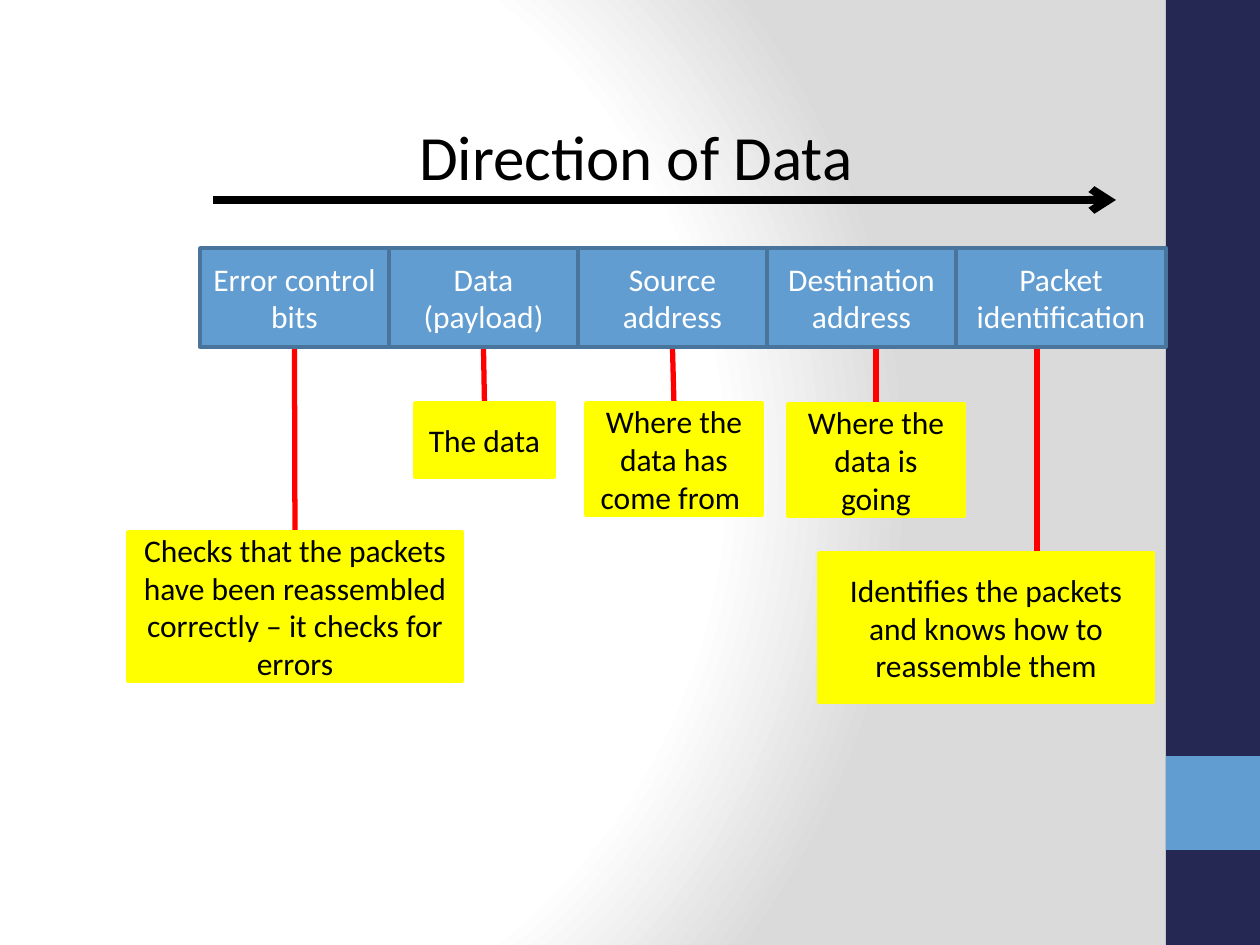
"""Build a slide that labels the fields of a data packet."""
from pptx import Presentation
from pptx.dml.color import RGBColor
from pptx.enum.shapes import MSO_CONNECTOR, MSO_SHAPE
from pptx.enum.text import MSO_ANCHOR, PP_ALIGN
from pptx.oxml import parse_xml
from pptx.oxml.ns import nsdecls
from pptx.util import Emu, Pt

SCALE = 914400 / 126
COLOURS = {"navy": "242852", "blue": "629DD1", "edge": "49749B", "yellow": "FFFF00",
           "red": "FF0000", "black": "000000", "white": "FFFFFF", "grey": "DADADA"}
FRAME_FORMAT = {"word_wrap": True, "vertical_anchor": MSO_ANCHOR.MIDDLE}


def px(*lengths):
    return [Emu(round(length * SCALE)) for length in lengths]


def write(box, text, size, colour):
    frame = box.text_frame
    frame.text = text
    for key, value in FRAME_FORMAT.items():
        setattr(frame, key, value)
    for para in frame.paragraphs:
        para.alignment = PP_ALIGN.CENTER
        for span in para.runs:
            for key, value in {"name": "Calibri", "size": Pt(size)}.items():
                setattr(span.font, key, value)
            span.font.color.rgb = RGBColor.from_string(COLOURS[colour])


deck = Presentation()
deck.slide_width, deck.slide_height = px(1260, 945)
page = deck.slides.add_slide(deck.slide_layouts[6])

stops = "".join(f'<a:gs pos="{position * 1000}"><a:srgbClr val="{COLOURS[colour]}"/></a:gs>'
                for position, colour in [(0, "white"), (75, "white"), (100, "grey")])
page.element.cSld.insert(0, parse_xml(
    f'<p:bg {nsdecls("p", "a")}><p:bgPr><a:gradFill rotWithShape="1"><a:gsLst>{stops}</a:gsLst>'
    '<a:path path="circle"><a:fillToRect l="20000" t="50000" r="100000" b="50000"/></a:path>'
    '</a:gradFill><a:effectLst/></p:bgPr></p:bg>'))

title = page.shapes.add_textbox(*px(146, 112, 980, 86))
write(title, "Direction of Data", 36, "black")

lines = []
for x1, y1, x2, y2, colour, width in [
        (213, 200, 1116, 200, "black", 4.5), (295, 347, 295, 532, "red", 3),
        (484, 347, 484, 403, "red", 3), (673, 347, 673, 403, "red", 3),
        (876, 347, 876, 404, "red", 3), (1037, 347, 1037, 553, "red", 3)]:
    line = page.shapes.add_connector(MSO_CONNECTOR.STRAIGHT, *px(x1, y1, x2, y2))
    line.line.color.rgb = RGBColor.from_string(COLOURS[colour])
    line.line.width = Pt(width)
    line.element.spPr.append(parse_xml(f'<a:effectLst {nsdecls("a")}/>'))
    lines.append(line)
arrow, *leaders = lines
arrow.line._get_or_add_ln().append(parse_xml(f'<a:tailEnd {nsdecls("a")} type="arrow"/>'))

fields = ["Error control bits", "Data\n(payload)", "Source address",
          "Destination address", "Packet identification"]
bars = [(1166, 0, 94, 945, "navy", None, "", None),
        (1166, 756, 94, 94, "blue", None, "", None)]
cells = [(200 + 189 * column, 248, 210 if column == 4 else 189, 99, "blue", "edge", text, "white")
         for column, text in enumerate(fields)]
notes = [(*place, "yellow", "yellow", text, "black") for place, text in [
    ((128, 532, 334, 149),
     "Checks that the packets have been reassembled correctly – it checks for errors"),
    ((415, 403, 139, 74), "The data"),
    ((586, 403, 176, 112), "Where the data has come from "),
    ((788, 404, 176, 112), "Where the data is going"),
    ((819, 553, 334, 149), "Identifies the packets and knows how to reassemble them")]]

boxes = []
for left, top, width, height, fill, edge, text, ink in bars + cells + notes:
    box = page.shapes.add_shape(MSO_SHAPE.RECTANGLE, *px(left, top, width, height))
    box.shadow.inherit = False
    box.fill.solid()
    box.fill.fore_color.rgb = RGBColor.from_string(COLOURS[fill])
    if edge:
        box.line.color.rgb = RGBColor.from_string(COLOURS[edge])
        box.line.width = Pt(2)
        write(box, text, 18, ink)
    else:
        box.line.fill.background()
    boxes.append(box)

cell_boxes, note_boxes = boxes[2:7], boxes[7:]
for column in range(3):
    leaders[column].begin_connect(cell_boxes[column], 2)
for column in range(4):
    leaders[column].end_connect(note_boxes[column], 0)

deck.save("out.pptx")
